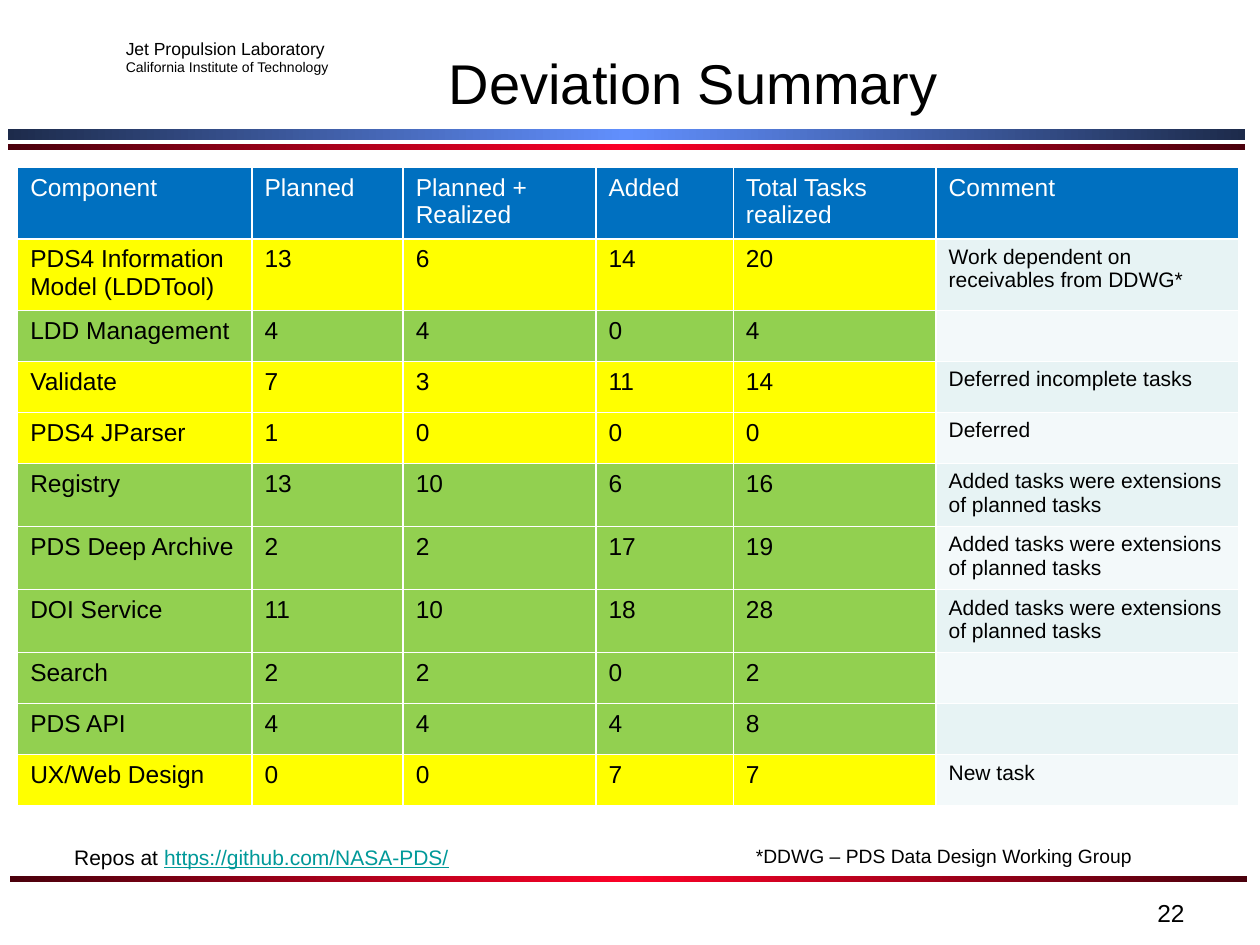
"""Build the Deviation Summary slide with its task table."""
from dataclasses import dataclass

from lxml.etree import SubElement
from pptx import Presentation
from pptx.dml.color import RGBColor as Rgb
from pptx.enum.shapes import MSO_SHAPE as Preset
from pptx.enum.text import MSO_ANCHOR as Anchor, PP_ALIGN as Align
from pptx.oxml.ns import qn
from pptx.util import Inches, Pt

HEADINGS = ["Component", "Planned", "Planned + Realized", "Added", "Total Tasks realized", "Comment"]
EXTENDED = "Added tasks were extensions of planned tasks"
TASKS = [
    ("deviated", "PDS4 Information Model (LDDTool)", 13, 6, 14, 20, "Work dependent on receivables from DDWG*"),
    ("done", "LDD Management", 4, 4, 0, 4, ""),
    ("deviated", "Validate", 7, 3, 11, 14, "Deferred incomplete tasks"),
    ("deviated", "PDS4 JParser", 1, 0, 0, 0, "Deferred"),
    ("done", "Registry", 13, 10, 6, 16, EXTENDED),
    ("done", "PDS Deep Archive", 2, 2, 17, 19, EXTENDED),
    ("done", "DOI Service", 11, 10, 18, 28, EXTENDED),
    ("done", "Search", 2, 2, 0, 2, ""),
    ("done", "PDS API", 4, 4, 4, 8, ""),
    ("deviated", "UX/Web Design", 0, 0, 7, 7, "New task"),
]
COLUMN_SHARES = [18.6, 12, 15.3, 10.9, 16.1, 24]
ROW_SHARE = 5.4


@dataclass(frozen=True)
class Theme:
    font: str = "Arial"
    ink: str = "000000"
    paper: str = "FFFFFF"
    link: str = "009999"
    header: str = "0070C0"
    deviated: str = "FFFF00"
    done: str = "92D050"
    comments: tuple = ("E7F3F4", "F3F9FA")
    blue: tuple = ("1D2B4B", "618FFD", "1D2B4B")
    red: tuple = ("4B000C", "FC0128", "4B000C")
    title: int = 32
    body: int = 14
    comment: int = 12
    footnote: int = 11
    lab: int = 10
    institute: int = 8


THEME = Theme()
RULES = [
    ((0.6, 13.67, 98.2, 1.13), THEME.blue),
    ((0.6, 15.2, 98.2, 0.67), THEME.red),
    ((0.8, 92.67, 98.2, 0.67), THEME.red),
]

deck = Presentation()
deck.slide_width, deck.slide_height = Inches(10), Inches(7.5)
slide = deck.slides.add_slide(deck.slide_layouts[6])


def across(share):
    return round(deck.slide_width * share / 100)


def down(share):
    return round(deck.slide_height * share / 100)


def area(left, top, width, height):
    return across(left), down(top), across(width), down(height)


def write(paragraph, text, size=THEME.body, color=THEME.ink, underline=None, align=None):
    if align is not None:
        paragraph.alignment = align
    run = paragraph.add_run()
    run.text = text
    run.font.name, run.font.size, run.font.underline = THEME.font, Pt(size), underline
    run.font.color.rgb = Rgb.from_string(color)


def text_frame(shares, anchor=Anchor.TOP, wrap=True):
    frame = slide.shapes.add_textbox(*area(*shares)).text_frame
    frame.word_wrap, frame.vertical_anchor = wrap, anchor
    return frame


def add_rule(shares, colors):
    rule = slide.shapes.add_shape(Preset.RECTANGLE, *area(*shares))
    rule.shadow.inherit = False
    rule.line.fill.background()
    rule.fill.gradient()
    rule.fill.gradient_angle = 0
    stops = rule.fill._fill._gradFill.find(qn("a:gsLst"))
    for stop in list(stops):
        stops.remove(stop)
    for index, color in enumerate(colors):
        stop = SubElement(stops, qn("a:gs"), pos=str(index * 50000))
        SubElement(stop, qn("a:srgbClr"), val=color)


def fill_cell(cell, text, fill, **style):
    properties = cell._tc.get_or_add_tcPr()
    for side in ("lnL", "lnR", "lnT", "lnB"):
        border = SubElement(properties, qn(f"a:{side}"), w=str(Pt(1)))
        SubElement(SubElement(border, qn("a:solidFill")), qn("a:srgbClr"), val=THEME.paper)
    cell.fill.solid()
    cell.fill.fore_color.rgb = Rgb.from_string(fill)
    if text:
        write(cell.text_frame.paragraphs[0], text, **style)


def add_task_table():
    rows, columns = len(TASKS) + 1, len(HEADINGS)
    place = area(1.4, 17.73, sum(COLUMN_SHARES), ROW_SHARE * rows)
    table = slide.shapes.add_table(rows, columns, *place).table
    for column, share in zip(table.columns, COLUMN_SHARES):
        column.width = across(share)
    for row in table.rows:
        row.height = down(ROW_SHARE)
    for column, heading in enumerate(HEADINGS):
        fill_cell(table.cell(0, column), heading, THEME.header, color=THEME.paper)
    for row, (status, *values, comment) in enumerate(TASKS, 1):
        fill = THEME.done if status == "done" else THEME.deviated
        for column, value in enumerate(values):
            fill_cell(table.cell(row, column), str(value), fill)
        fill_cell(table.cell(row, columns - 1), comment, THEME.comments[(row - 1) % 2], size=THEME.comment)


for shares, colors in RULES:
    add_rule(shares, colors)

letterhead = text_frame((9, 3.33, 18.5, 5.33))
write(letterhead.paragraphs[0], "Jet Propulsion Laboratory", size=THEME.lab)
write(letterhead.add_paragraph(), "California Institute of Technology", size=THEME.institute)

title = text_frame((26.7, 4, 56.7, 9.33), anchor=Anchor.MIDDLE)
write(title.paragraphs[0], "Deviation Summary", size=THEME.title, align=Align.CENTER)

page_number = text_frame((71.7, 94.4, 23.3, 3.6))
write(page_number.paragraphs[0], "22", align=Align.RIGHT)

add_task_table()

footnote = text_frame((59, 88.67, 32.1, 3.87), wrap=False)
write(footnote.paragraphs[0], "*DDWG – PDS Data Design Working Group", size=THEME.footnote)

repos = text_frame((4.9, 88.67, 32.5, 4), wrap=False).paragraphs[0]
write(repos, "Repos at ", size=THEME.comment)
write(repos, "https://github.com/NASA-PDS/", size=THEME.comment, color=THEME.link, underline=True)

deck.save("out.pptx")
